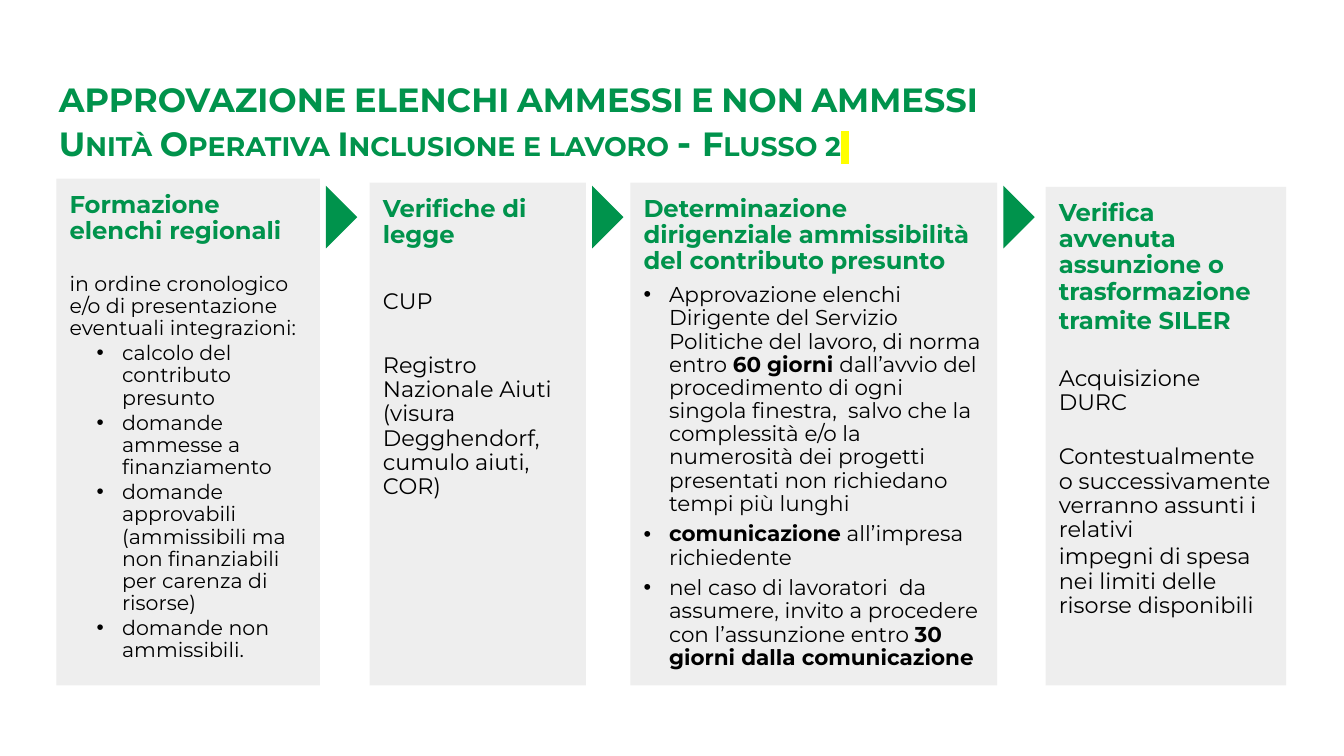
"""Builds a slide showing the four steps of a grant approval flow."""
import pptx
import pptx.dml.color
import pptx.enum.shapes
import pptx.enum.text
import pptx.oxml.ns
import pptx.util
from lxml import etree

HUES = {"green": "00934C", "panel": "EEEEEE", "ink": "000000", "mark": "FFFF00"}
WIDE = 10
HIGH = WIDE * 9 / 16
COLS = 100
FONT = "Montserrat"
FOOT = 51
ARROW = 3.3
GAP = 0.45


def grid(count):
    return pptx.util.Inches(count * WIDE / COLS)


def tint(name):
    return pptx.dml.color.RGBColor.from_string(HUES[name])


def node(root, tag, **attrs):
    return etree.SubElement(root, pptx.oxml.ns.qn(tag), **attrs)


def dot(para, left, hang):
    props = para._p.get_or_add_pPr()
    props.set("marL", str(grid(left)))
    props.set("indent", str(-grid(hang)))
    node(node(props, "a:buClr"), "a:srgbClr", val=HUES["ink"])
    node(props, "a:buFont", typeface="Arial")
    node(props, "a:buChar", char="•")


def write(para, text, size=12, hue="ink", bold=False, small=False, mark=None):
    run = para.add_run()
    run.text = text
    font = run.font
    font.size, font.bold = pptx.util.Pt(size), bold
    font.color.rgb = tint(hue)
    props = run._r.get_or_add_rPr()
    if small:
        props.set("cap", "small")
    if mark:
        node(node(props, "a:highlight"), "a:srgbClr", val=HUES[mark])
    font.name = FONT


def frame(shape):
    body = shape.text_frame
    body.word_wrap = True
    body.vertical_anchor = pptx.enum.text.MSO_ANCHOR.TOP
    body.margin_left = body.margin_right = grid(1)
    body.margin_top = body.margin_bottom = grid(1)
    return body


def block(slide, kind, box, hue):
    shape = slide.shapes.add_shape(kind, *map(grid, box))
    shape.shadow.inherit = False
    shape.fill.solid()
    shape.fill.fore_color.rgb = tint(hue)
    shape.line.fill.background()
    return shape


def title(slide, box):
    body = frame(slide.shapes.add_textbox(*map(grid, box)))
    look = {"size": 18, "hue": "green", "bold": True, "small": True}
    para = body.paragraphs[0]
    write(para, "APPROVAZIONE ELENCHI AMMESSI E NON AMMESSI ", **look)
    para.add_line_break()
    write(para, "Unità Operativa Inclusione e lavoro ", **look)
    write(para, "- ", **{**look, "size": 20, "small": False})
    write(para, "Flusso 2", **look)
    write(para, " ", mark="mark", **look)


def panel(slide, box, heads, items, size, after, lead, inset=None):
    """Each item is (text, gap after it, bulleted); odd '*' parts are bold."""
    body = frame(block(slide, pptx.enum.shapes.MSO_SHAPE.RECTANGLE, box, "panel"))
    rows = [(text, after, False, True) for text in heads[:-1]]
    rows += [(heads[-1], lead, False, True)]
    rows += [(*item, False) for item in items]
    for spot, (text, space, dotted, head) in enumerate(rows):
        para = body.add_paragraph() if spot else body.paragraphs[0]
        para.alignment = pptx.enum.text.PP_ALIGN.LEFT
        para.line_spacing = 0.9
        para.space_after = pptx.util.Pt(space)
        if dotted:
            dot(para, inset, 1.9)
        for part, words in enumerate(text.split("*")):
            if words:
                write(para, words, size=13 if head else size,
                      hue="green" if head else "ink", bold=head or part % 2 == 1)


def arrow(slide, box):
    kind = pptx.enum.shapes.MSO_SHAPE.RIGHT_TRIANGLE
    block(slide, kind, box, "green").rotation = 225


def flow(slide, steps):
    for left, top, width, details in steps:
        panel(slide, (left, top, width, FOOT - top), **details)
    for left, top, width, details in steps[:-1]:
        arrow(slide, (left + width - ARROW / 2 + GAP, 14.5, ARROW, ARROW))


STEPS = [
    (4.2, 13.3, 19.6, dict(
        heads=["Formazione elenchi regionali"], size=11, after=1.6, lead=15.5, inset=3.9,
        items=[
            ("in ordine cronologico e/o di presentazione eventuali integrazioni:", 1.6, False),
            ("calcolo del contributo presunto", 1.6, True),
            ("domande ammesse a finanziamento", 1.6, True),
            ("domande approvabili (ammissibili ma non finanziabili per carenza di risorse)",
             1.6, True),
            ("domande non ammissibili.", 0, True)])),
    (27.5, 13.6, 16.1, dict(
        heads=["Verifiche di legge"], size=12, after=4, lead=22.3,
        items=[
            ("CUP", 21.3, False),
            ("Registro Nazionale Aiuti (visura Degghendorf, cumulo aiuti, COR)", 0, False)])),
    (46.9, 13.6, 27.3, dict(
        heads=["Determinazione dirigenziale ammissibilità del contributo presunto"],
        size=11.5, after=4, lead=5, inset=1.9,
        items=[
            ("Approvazione elenchi Dirigente del Servizio Politiche del lavoro, di norma "
             "entro *60 giorni *dall’avvio del procedimento di ogni singola finestra,  salvo "
             "che la complessità e/o la numerosità dei progetti presentati non richiedano "
             "tempi più lunghi", 4, True),
            ("*comunicazione* all’impresa richiedente", 4, True),
            ("nel caso di lavoratori  da assumere, invito a procedere con l’assunzione "
             "entro *30 giorni dalla comunicazione", 0, True)])),
    (77.8, 13.9, 17.9, dict(
        heads=["Verifica avvenuta assunzione o trasformazione", "tramite SILER"],
        size=12, after=1.9, lead=17,
        items=[
            ("Acquisizione DURC", 16.3, False),
            ("Contestualmente o successivamente verranno assunti i relativi", 1.7, False),
            ("impegni di spesa nei limiti delle risorse disponibili", 0, False)])),
]


def main():
    deck = pptx.Presentation()
    deck.slide_width = pptx.util.Inches(WIDE)
    deck.slide_height = pptx.util.Inches(HIGH)
    slide = deck.slides.add_slide(deck.slide_layouts[6])
    title(slide, (3.4, 4.9, 93.2, 6.3))
    flow(slide, STEPS)
    deck.save("out.pptx")


if __name__ == "__main__":
    main()
